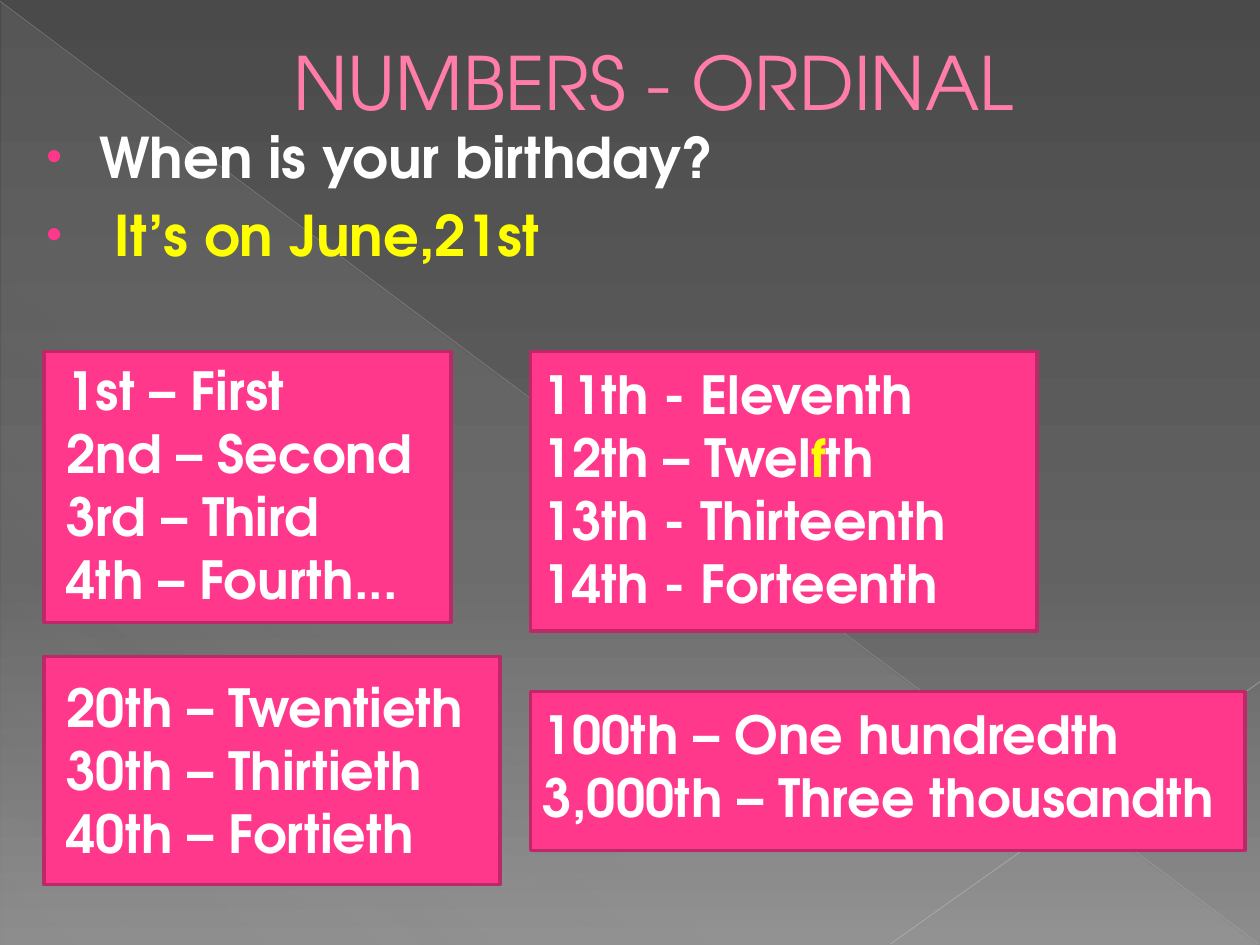
from lxml import etree
from pptx import Presentation
from pptx.dml.color import RGBColor
from pptx.enum.shapes import MSO_CONNECTOR, MSO_SHAPE
from pptx.enum.text import MSO_ANCHOR, PP_ALIGN
from pptx.oxml.ns import qn
from pptx.util import Inches, Pt

RECT, TRIANGLE = MSO_SHAPE.RECTANGLE, MSO_SHAPE.RIGHT_TRIANGLE
STRAIGHT = MSO_CONNECTOR.STRAIGHT
CENTER, MIDDLE = PP_ALIGN.CENTER, MSO_ANCHOR.MIDDLE

FONT = "TeX Gyre Adventor"
COLORS = {
    "top": "4A4A4A", "mid": "626262", "bottom": "8C8C8C",
    "veil": "D2D2D2", "diagonal": "BFBFBF", "corner": "C6C6C6",
    "pink": "FF388C", "border": "BD2968",
    "title": "FF7DA7", "outline": "B12761",
    "white": "FFFFFF", "yellow": "FFFF00",
}

# The slide is a grid of 100 columns by 75 rows
WIDTH, HEIGHT = Inches(10), Inches(7.5)
COL, ROW = WIDTH / 100, HEIGHT / 75


def grid(x, y, w, h):
    return int(x * COL), int(y * ROW), int(w * COL), int(h * ROW)


def rgb(name):
    return RGBColor.from_string(COLORS[name])


def sub(parent, tag, **attrs):
    return etree.SubElement(parent, qn(tag), attrs)


def set_gradient(fill, owner, stops, angle):
    """Stops are (position %, colour name, opacity %); the angle is clockwise."""
    fill.gradient()
    fill.gradient_angle = 360 - angle
    stop_list = next(owner.iter(qn("a:gsLst")))
    for old in list(stop_list):
        stop_list.remove(old)
    for pos, name, opacity in stops:
        gs = sub(stop_list, "a:gs", pos=str(pos * 1000))
        color = sub(gs, "a:srgbClr", val=COLORS[name])
        if opacity < 100:
            sub(color, "a:alpha", val=str(opacity * 1000))


def add_line(s, start, end, color, width, opacity):
    x1, y1, x2, y2 = grid(*start, *end)
    line = s.shapes.add_connector(STRAIGHT, x1, y1, x2, y2)
    line.line.color.rgb = rgb(color)
    line.line.width = Pt(width)
    sp_pr = line._element.spPr
    sub(next(sp_pr.iter(qn("a:srgbClr"))), "a:alpha", val=str(opacity * 1000))
    sub(sp_pr, "a:effectLst")


def add_text(s, box, lines, size, color="white", bold=True):
    """Each line is a list of (text, colour name or None) runs."""
    tf = s.shapes.add_textbox(*grid(*box)).text_frame
    tf.word_wrap = True
    for i, runs in enumerate(lines):
        p = tf.paragraphs[0] if i == 0 else tf.add_paragraph()
        for text, run_color in runs:
            r = p.add_run()
            r.text = text
            r.font.name, r.font.size, r.font.bold = FONT, Pt(size), bold
            r.font.color.rgb = rgb(run_color or color)
    return tf


def add_background(s):
    set_gradient(s.background.fill, s.element,
                 [(0, "top", 100), (60, "mid", 100), (100, "bottom", 100)], 90)
    # Translucent lower triangle
    sp = s.shapes.add_shape(TRIANGLE, *grid(0.1, 0.2, 99.8, 74.8))
    sp.shadow.inherit = False
    sp.line.fill.background()
    set_gradient(sp.fill, sp._element,
                 [(0, "veil", 10), (70, "veil", 8), (100, "veil", 1)], 133)
    # Hairlines
    add_line(s, (0, 0.1), (99.9, 74.9), "diagonal", 0.39, 35)
    add_line(s, (100, 54.1), (70.7, 74.9), "corner", 0.47, 45)


def add_title(s, box, text):
    tf = add_text(s, box, [[(text, None)]], 42, "title", bold=False)
    tf.vertical_anchor = MIDDLE
    p = tf.paragraphs[0]
    p.alignment = CENTER
    p._p.get_or_add_pPr().set("marL", str(Inches(0.53)))
    # Thin outline around the letters
    ln = etree.Element(qn("a:ln"), w=str(Pt(0.5)))
    sub(sub(ln, "a:solidFill"), "a:srgbClr", val=COLORS["outline"])
    p.runs[0].font._element.insert(0, ln)


def add_dialogue(s, box, lines):
    tf = add_text(s, box, lines, 32)
    for p in tf.paragraphs:
        p_pr = p._p.get_or_add_pPr()
        p_pr.set("marL", str(Inches(0.49)))
        p_pr.set("indent", str(Inches(-0.42)))
        sub(sub(p_pr, "a:spcBef"), "a:spcPct", val="20000")
        sub(sub(p_pr, "a:buClr"), "a:srgbClr", val=COLORS["pink"])
        sub(p_pr, "a:buSzPct", val="80000")
        sub(p_pr, "a:buFont", typeface="Arial")
        sub(p_pr, "a:buChar", char="•")


def add_card(s, box, offset, text_width, lines):
    """Pink panel with its list, shifted by offset from the panel's corner."""
    x, y = box[:2]
    dx, dy = offset
    sp = s.shapes.add_shape(RECT, *grid(*box))
    sp.shadow.inherit = False
    sp.fill.solid()
    sp.fill.fore_color.rgb = rgb("pink")
    sp.line.color.rgb = rgb("border")
    sp.line.width = Pt(2)
    text_height = 1 + 5.05 * len(lines)
    add_text(s, (x + dx, y + dy, text_width, text_height), lines, 30)


def plain(*texts):
    return [[(text, None)] for text in texts]


def main():
    prs = Presentation()
    prs.slide_width, prs.slide_height = WIDTH, HEIGHT
    s = prs.slides.add_slide(prs.slide_layouts[6])

    add_background(s)
    left, right, top = 3.5, 42.1, 27.9

    # Hundreds and thousands
    add_card(s, (right, 54.9, 56.7, 12.6), (0, 0.3), 56.7,
             plain("100th – One hundredth", "3,000th – Three thousandth"))
    # Teens
    twelfth = [("12th – Twel", None), ("f", "yellow"), ("th", None)]
    add_card(s, (right, top, 40.2, 22.2), (0, 0.3), 38.6,
             plain("11th - Eleventh") + [twelfth]
             + plain("13th - Thirteenth", "14th - Forteenth"))
    # Tens
    add_card(s, (left, 52.1, 36.2, 18.1), (0.8, 1), 40.2,
             plain("20th – Twentieth", "30th – Thirtieth", "40th – Fortieth"))
    # First four
    add_card(s, (left, top, 32.3, 21.5), (0.8, 0), 32.3,
             plain("1st – First", "2nd – Second", "3rd – Third", "4th – Fourth..."))

    add_title(s, (4.2, 1.3, 90, 10.2), "NUMBERS - ORDINAL")
    add_dialogue(s, (2, 9.2, 85, 13.4),
                 [[("When is your birthday?", None)],
                  [(" It’s on June,21st", "yellow")]])

    prs.save("out.pptx")


if __name__ == "__main__":
    main()
